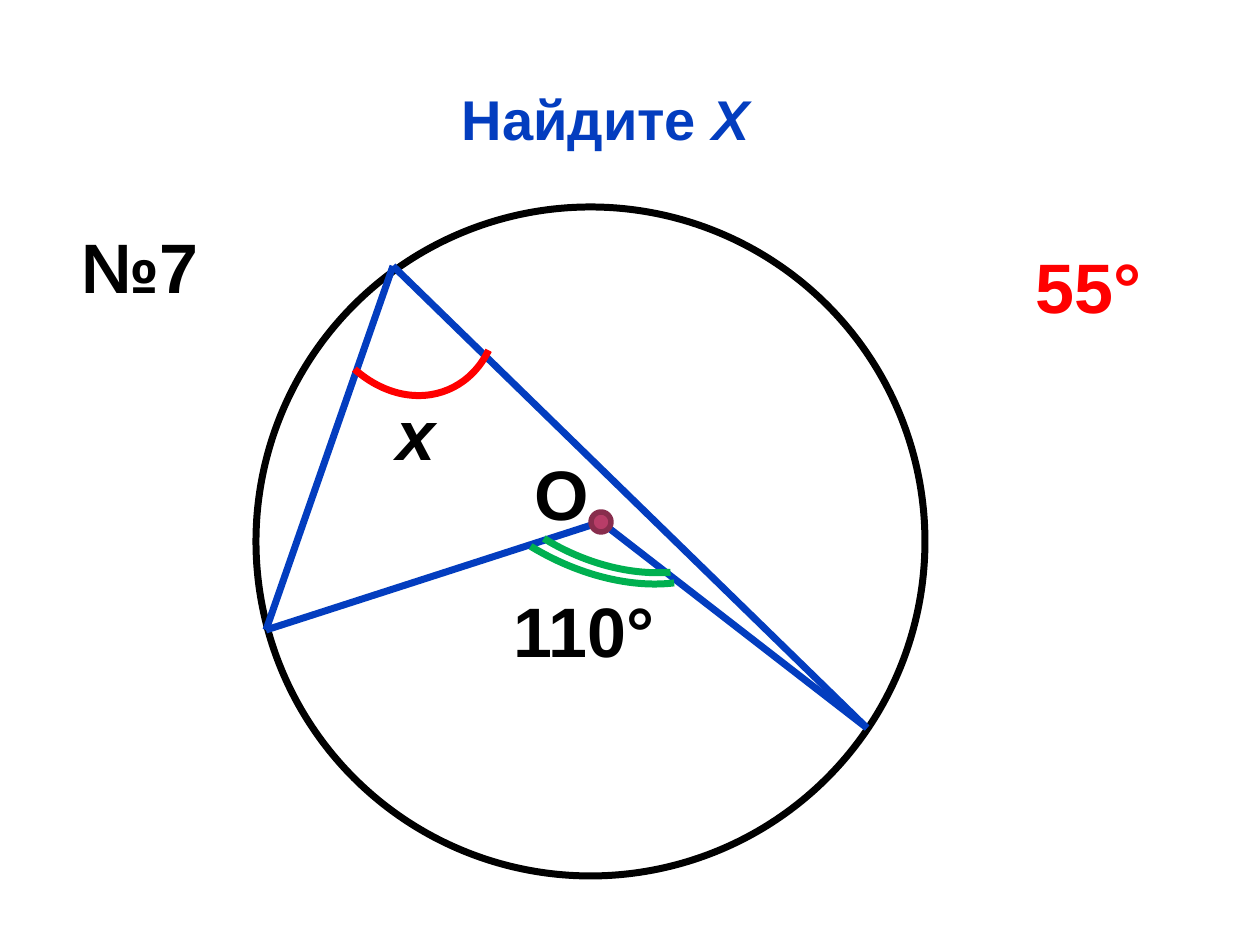
from lxml import etree
from pptx import Presentation
from pptx import util as u
from pptx.dml.color import RGBColor
from pptx.enum import shapes, text
from pptx.oxml.ns import qn

COLORS = {
    "white": "FFFFFF", "black": "000000", "blue": "033DBF", "red": "FF0000",
    "green": "00B050", "center": "B83D68", "center_edge": "882D4D",
}
PX_PER_INCH = 126


def px(length):
    return u.Emu(round(length * 914400 / PX_PER_INCH))


def rgb(name):
    return RGBColor.from_string(COLORS[name])


class Drawing:
    font = "Arial"
    stroke = 4

    def __init__(self, slide):
        self.slide = slide

    def style_run(self, run, size, color, italic=False):
        run.font.name = self.font
        run.font.size = u.Pt(size)
        run.font.bold = True
        run.font.italic = italic
        run.font.color.rgb = rgb(color)

    def style_line(self, line, color, width):
        line.color.rgb = rgb(color)
        line.width = u.Pt(width)

    def title(self, words, unknown, box):
        heading = self.slide.shapes.title
        heading.left, heading.top, heading.width, heading.height = map(px, box)
        frame = heading.text_frame
        frame.vertical_anchor = text.MSO_ANCHOR.BOTTOM
        frame.text = words
        paragraph = frame.paragraphs[0]
        paragraph.alignment = text.PP_ALIGN.CENTER
        paragraph.add_run().text = unknown
        for run in paragraph.runs:
            self.style_run(run, 32, "blue", italic=run.text == unknown)

    def circle(self, left, top, size, fill, edge, width=stroke):
        disc = self.slide.shapes.add_shape(
            shapes.MSO_SHAPE.OVAL, *map(px, (left, top, size, size)))
        disc.shadow.inherit = False
        disc.fill.solid()
        disc.fill.fore_color.rgb = rgb(fill)
        self.style_line(disc.line, edge, width)

    def segment(self, start, end):
        side = self.slide.shapes.add_connector(
            shapes.MSO_CONNECTOR.STRAIGHT, *map(px, (*start, *end)))
        self.style_line(side.line, "blue", self.stroke)
        etree.SubElement(side._element.spPr, qn("a:effectLst"))

    def arc(self, box, rotation, limits, color):
        mark = self.slide.shapes.add_shape(shapes.MSO_SHAPE.ARC, *map(px, box))
        mark.shadow.inherit = False
        mark.rotation = rotation
        # Angles are stored in 1/60000 degree, adjustments in 1/100000
        for i, degrees in enumerate(limits):
            mark.adjustments[i] = degrees * 0.6
        mark.fill.background()
        self.style_line(mark.line, color, self.stroke)

    def label(self, words, left, top, width, color="black", italic=False, wrap=True):
        box = self.slide.shapes.add_textbox(*map(px, (left, top, width, 97)))
        frame = box.text_frame
        frame.word_wrap = wrap
        frame.auto_size = text.MSO_AUTO_SIZE.SHAPE_TO_FIT_TEXT
        frame.text = words
        self.style_run(frame.paragraphs[0].runs[0], 40, color, italic)


def main():
    prs = Presentation()
    prs.slide_width, prs.slide_height = u.Inches(10), u.Inches(7.5)
    drawing = Drawing(prs.slides.add_slide(prs.slide_layouts[5]))

    drawing.title("Найдите ", "Х", (49, 66, 1113, 92))

    # Circle with the inscribed and the central angle
    drawing.circle(256, 207, 669, "white", "black")
    vertex, left_end, right_end, center = (393, 266), (266, 630), (867, 728), (601, 522)
    for apex in (vertex, center):
        for end in (right_end, left_end):
            drawing.segment(end, apex)

    # Angle marks
    drawing.arc((294, 197, 222, 181), 67, (329.92, 54.73), "red")
    drawing.arc((440, 324, 338, 234), 209.7, (215.2, 274.07), "green")
    drawing.arc((416, 341, 354, 224), 209.7, (208.3, 274.07), "green")

    # Labels
    drawing.label("О", 522, 444, 81, wrap=False)
    drawing.label("110°", 501, 581, 168, wrap=False)
    drawing.label("х", 384, 384, 118, italic=True)
    drawing.label("№7", 69, 217, 147)
    drawing.label("55°", 1023, 237, 137, color="red")

    # Center point
    drawing.circle(591, 512, 20, "center", "center_edge", 3.15)

    prs.save("out.pptx")


if __name__ == "__main__":
    main()
